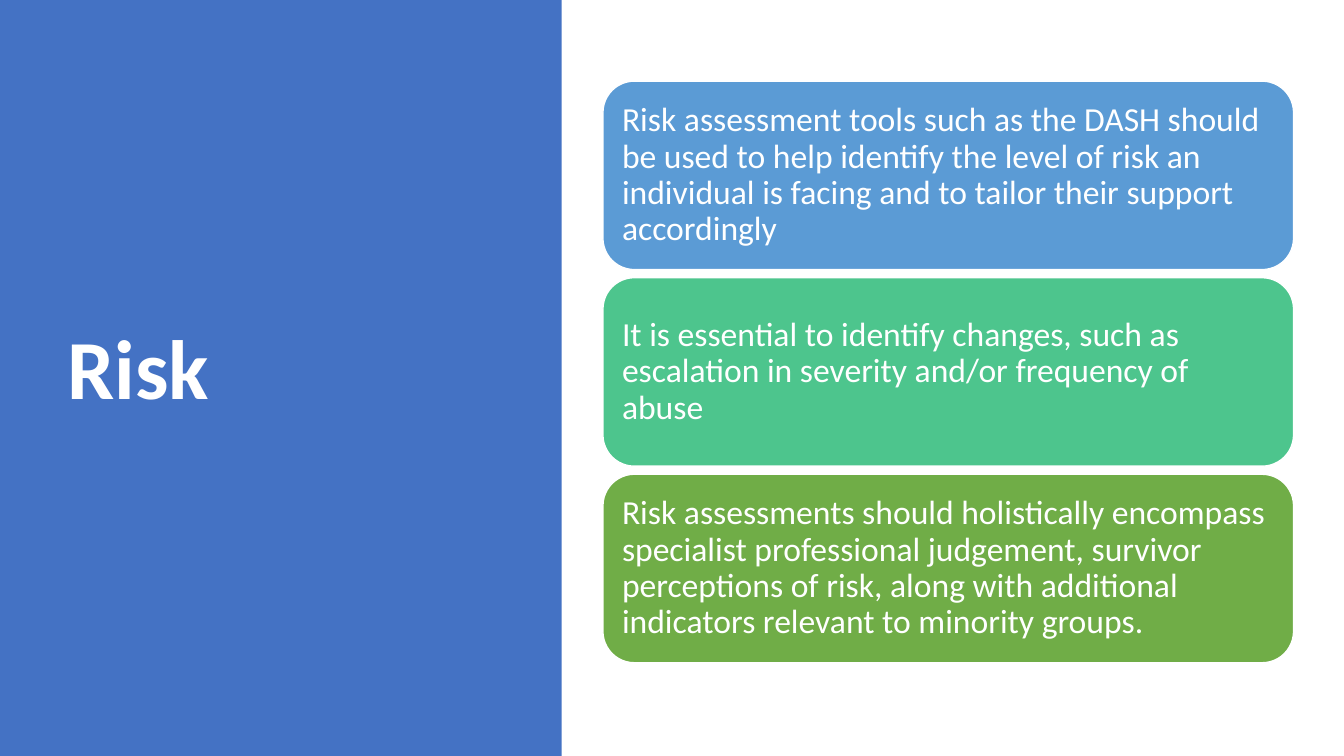
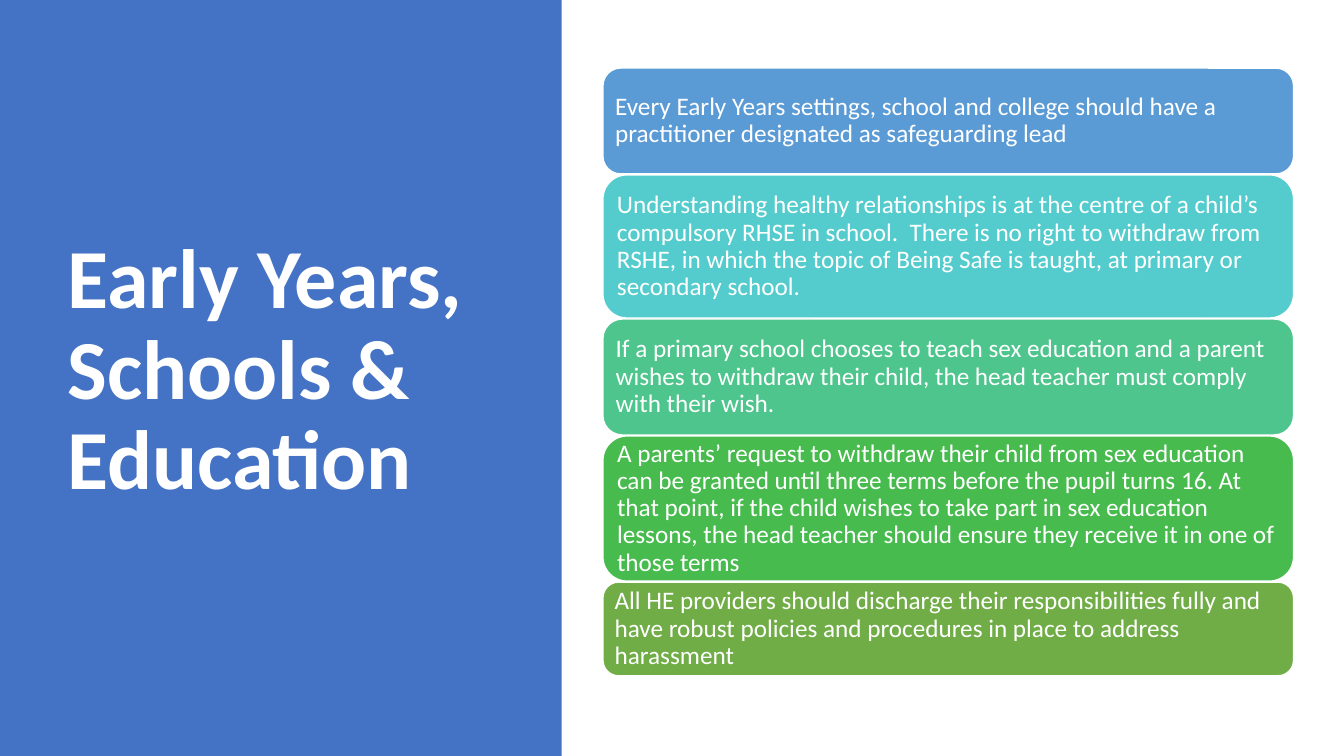
"""Build two slides with a title band and a stack of coloured cards."""
from pptx import Presentation
from pptx import util as u
from pptx.dml.color import RGBColor
from pptx.enum import shapes, text

FONT = "Calibri"
WHITE, BAND = "FFFFFF", "4472C4"
BLUE, TEAL, MINT, GREEN, OLIVE = "5B9BD5", "54CCCD", "4DC58D", "48BB4F", "70AD47"
LEFT, WIDTH, MIDDLE = 5.98, 6.85, 3.69

RISK = [
    (1.87, BLUE, "Risk assessment tools such as the DASH should be used to help identify "
     "the level of risk an individual is facing and to tailor their support accordingly"),
    (1.87, MINT, "It is essential to identify changes, such as escalation in severity "
     "and/or frequency of abuse"),
    (1.87, OLIVE, "Risk assessments should holistically encompass specialist professional "
     "judgement, survivor perceptions of risk, along with additional indicators relevant "
     "to minority groups."),
]
SCHOOLS = [
    (1.05, BLUE, "Every Early Years settings, school and college should have a practitioner "
     "designated as safeguarding lead"),
    (1.42, TEAL, "Understanding healthy relationships is at the centre of a child’s "
     "compulsory RHSE in school.  There is no right to withdraw from RSHE, in which the "
     "topic of Being Safe is taught, at primary or secondary school."),
    (1.15, MINT, "If a primary school chooses to teach sex education and a parent wishes to "
     "withdraw their child, the head teacher must comply with their wish."),
    (1.44, GREEN, "A parents’ request to withdraw their child from sex education can be "
     "granted until three terms before the pupil turns 16. At that point, if the child "
     "wishes to take part in sex education lessons, the head teacher should ensure they "
     "receive it in one of those terms"),
    (0.93, OLIVE, "All HE providers should discharge their responsibilities fully and have "
     "robust policies and procedures in place to address harassment"),
]


def paint(color, tone):
    """Set a colour format from a hex string."""
    color.rgb = RGBColor.from_string(tone)


def write(shape, words, size, bold=False):
    """Put white, left-aligned, vertically centred text into a shape."""
    frame = shape.text_frame
    frame.text = words
    frame.word_wrap = True
    frame.auto_size = text.MSO_AUTO_SIZE.NONE
    frame.vertical_anchor = text.MSO_ANCHOR.MIDDLE
    for para in frame.paragraphs:
        para.alignment = text.PP_ALIGN.LEFT
        para.line_spacing = 0.9
        for run in para.runs:
            run.font.name, run.font.size, run.font.bold = FONT, u.Pt(size), bold
            paint(run.font.color, WHITE)


def add_box(slide, kind, place, tone):
    """Add a filled shape without line or shadow."""
    box = slide.shapes.add_shape(kind, *map(u.Inches, place))
    box.shadow.inherit = False
    box.fill.solid()
    paint(box.fill.fore_color, tone)
    box.line.fill.background()
    return box


def add_page(deck, words):
    """Add a slide with the left band and its title."""
    slide = deck.slides.add_slide(deck.slide_layouts[5])
    title = slide.shapes.title
    title.left, title.top, title.width, title.height = map(u.Inches, (0.57, 0.68, 4.16, 6.02))
    write(title, words, 60, True)
    band = add_box(slide, shapes.MSO_SHAPE.RECTANGLE, (0, 0, 5.57, 7.5), BAND)
    title.element.addprevious(band.element)
    return slide


def add_card(slide, place, tone, words, size, pad):
    """Add one rounded card with text and a white outline."""
    card = add_box(slide, shapes.MSO_SHAPE.ROUNDED_RECTANGLE, place, tone)
    card.line.width = u.Pt(1)
    paint(card.line.color, WHITE)
    frame = card.text_frame
    frame.margin_left = frame.margin_right = u.Inches(pad)
    frame.margin_top = frame.margin_bottom = u.Inches(pad)
    write(card, words, size)


def add_stack(slide, cards, gap, size, pad):
    """Stack cards with equal gaps around the middle line."""
    total = sum(card[0] for card in cards) + gap * (len(cards) - 1)
    top = MIDDLE - total / 2
    for height, tone, words in cards:
        add_card(slide, (LEFT, top, WIDTH, height), tone, words, size, pad)
        top += height + gap


def main():
    """Build and save the deck."""
    deck = Presentation()
    deck.slide_width, deck.slide_height = u.Inches(13.33), u.Inches(7.5)
    add_stack(add_page(deck, "Risk"), RISK, 0.08, 24, 0.1)
    add_stack(add_page(deck, "Early Years, Schools & Education"), SCHOOLS, 0.01, 18, 0.07)
    deck.save("out.pptx")


if __name__ == "__main__":
    main()
